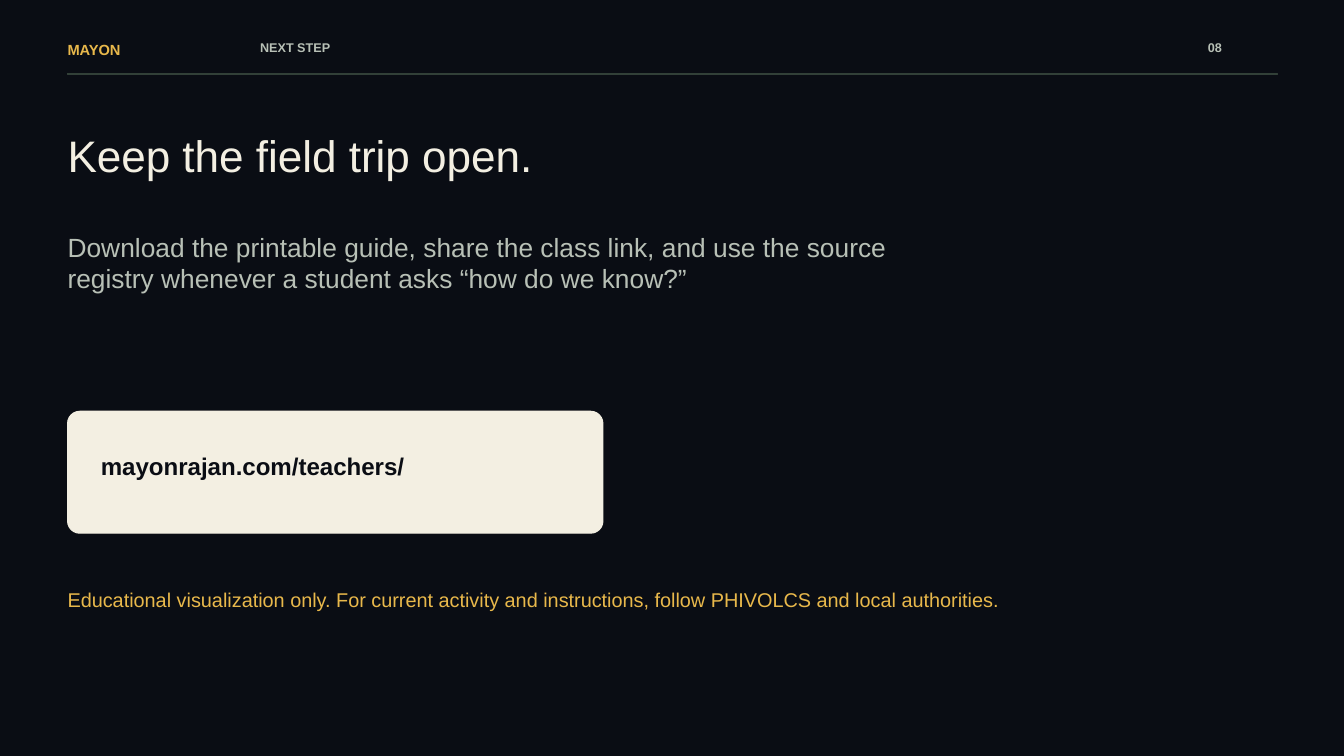
from pptx import Presentation
from pptx.dml.color import RGBColor
from pptx.enum.shapes import MSO_SHAPE as Shape
from pptx.util import Inches, Pt

COLORS = {
    "night": "0A0D14",
    "gold": "E8B84B",
    "sage": "B8C0B6",
    "rule": "324038",
    "cream": "F3EFE2",
}
MARGIN = 0.67
HEADER_TOP = 0.4


def color(name):
    return RGBColor.from_string(COLORS[name])


def write(text_frame, text, size=12, fill="cream", bold=False, font="Arial"):
    text_frame.word_wrap = True
    text_frame.margin_left = text_frame.margin_right = 0
    text_frame.margin_top = text_frame.margin_bottom = 0
    run = text_frame.paragraphs[0].add_run()
    run.text = text
    run.font.name = font
    run.font.size = Pt(size)
    run.font.bold = bold
    run.font.color.rgb = color(fill)


class SlideBuilder:
    def __init__(self, presentation, background="night"):
        self.slide = presentation.slides.add_slide(presentation.slide_layouts[6])
        self.slide.background.fill.solid()
        self.slide.background.fill.fore_color.rgb = color(background)

    def text(self, text, left, top, width, height, **style):
        box = self.slide.shapes.add_textbox(
            Inches(left), Inches(top), Inches(width), Inches(height))
        write(box.text_frame, text, **style)

    def panel(self, kind, left, top, width, height, fill, corner=None):
        shape = self.slide.shapes.add_shape(
            kind, Inches(left), Inches(top), Inches(width), Inches(height))
        shape.shadow.inherit = False
        shape.fill.solid()
        shape.fill.fore_color.rgb = color(fill)
        shape.line.color.rgb = color(fill)
        shape.line.width = Pt(0)
        if corner is not None:
            shape.adjustments[0] = corner

    def header(self, brand, section, number):
        self.text(brand, MARGIN, HEADER_TOP, 1.67, 0.21, size=10.5, fill="gold", bold=True)
        for label, left, width in ((section, 2.58, 7.29), (number, 11.98, 0.69)):
            self.text(label, left, HEADER_TOP, width, 0.21, size=9, fill="sage", bold=True)
        self.panel(Shape.RECTANGLE, MARGIN, 0.73, 12, 0.01, "rule")


def main():
    presentation = Presentation()
    presentation.slide_width = Inches(13.33)
    presentation.slide_height = Inches(7.5)

    builder = SlideBuilder(presentation)
    builder.header("MAYON", "NEXT STEP", "08")
    builder.text("Keep the field trip open.", MARGIN, 1.27, 8.54, 0.62, size=31.5)
    builder.text(
        "Download the printable guide, share the class link, and use the source "
        "registry whenever a student asks “how do we know?”",
        MARGIN, 2.29, 8.85, 0.79, size=18.8, fill="sage")
    builder.panel(Shape.ROUNDED_RECTANGLE, MARGIN, 4.08, 5.31, 1.21, "cream", corner=0.1)
    builder.text("mayonrajan.com/teachers/", 1, 4.48, 4.58, 0.27,
                 size=17.2, fill="night", bold=True)
    builder.text(
        "Educational visualization only. For current activity and instructions, "
        "follow PHIVOLCS and local authorities.",
        MARGIN, 5.83, 10.21, 0.44, size=14.2, fill="gold")

    presentation.save("out.pptx")


if __name__ == "__main__":
    main()
